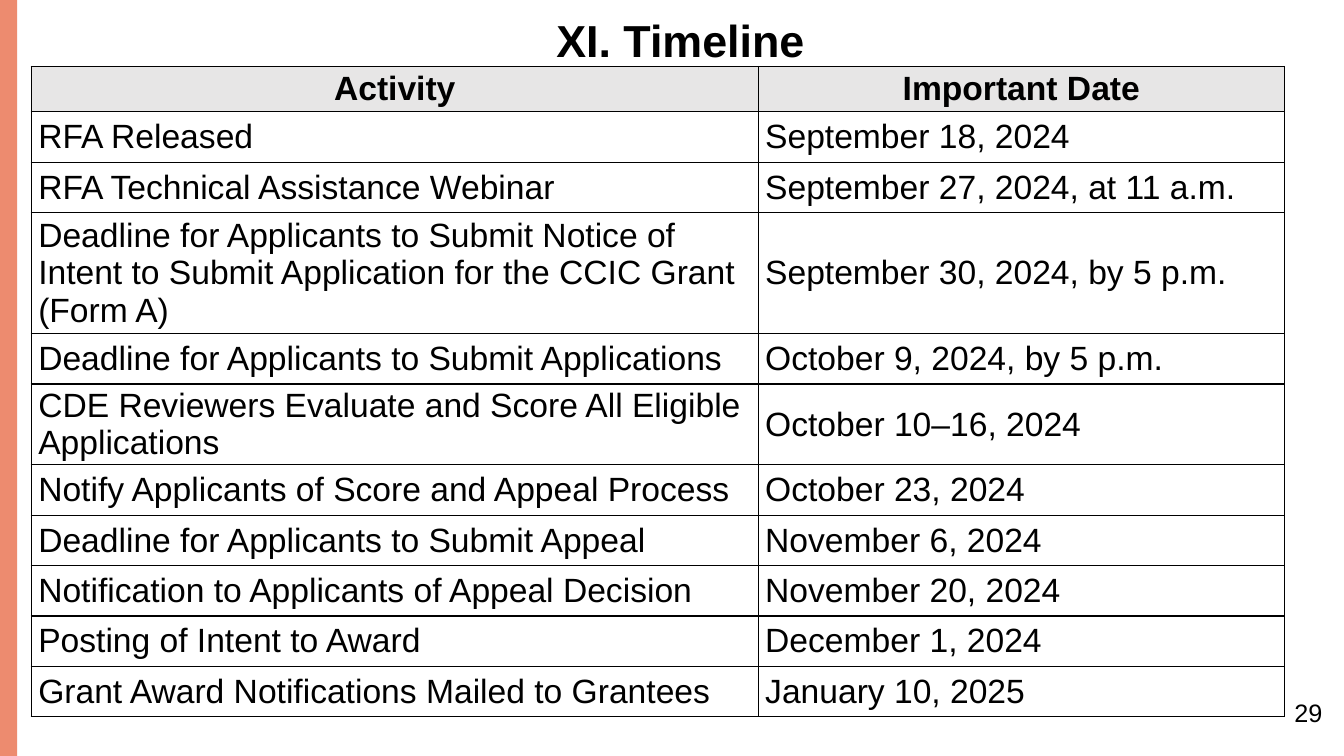
from lxml import etree
from pptx import Presentation, util as u
from pptx.dml.color import RGBColor
from pptx.enum import shapes, text
from pptx.oxml import ns

BLACK = RGBColor(0x00, 0x00, 0x00)
WHITE = RGBColor(0xFF, 0xFF, 0xFF)
GREY = RGBColor(0xE7, 0xE6, 0xE6)
CORAL = RGBColor(0xED, 0x8B, 0x6F)
PX = 9144

HEADER = ("Activity", "Important Date")
MILESTONES = [
    ("RFA Released", "September 18, 2024"),
    ("RFA Technical Assistance Webinar", "September 27, 2024, at 11 a.m."),
    ("Deadline for Applicants to Submit Notice of Intent to Submit Application "
     "for the CCIC Grant (Form A)", "September 30, 2024, by 5 p.m."),
    ("Deadline for Applicants to Submit Applications", "October 9, 2024, by 5 p.m."),
    ("CDE Reviewers Evaluate and Score All Eligible Applications", "October 10–16, 2024"),
    ("Notify Applicants of Score and Appeal Process", "October 23, 2024"),
    ("Deadline for Applicants to Submit Appeal", "November 6, 2024"),
    ("Notification to Applicants of Appeal Decision", "November 20, 2024"),
    ("Posting of Intent to Award", "December 1, 2024"),
    ("Grant Award Notifications Mailed to Grantees", "January 10, 2025"),
]


def assign(target, values):
    """Set each named attribute on the target."""
    for name, value in values.items():
        setattr(target, name, value)


class SlideBuilder:
    """Hold the style and current slide, and add elements measured in px."""

    font = "Arial"
    border = u.Pt(1)

    def __init__(self, slide):
        """Keep the slide to draw on."""
        self.slide = slide

    def box(self, *bounds):
        """Turn px lengths into EMU."""
        return [value * PX for value in bounds]

    def add_words(self, frame, words, size, bold=False, **layout):
        """Put one styled paragraph into a text frame."""
        paragraph = frame.paragraphs[0]
        assign(paragraph, layout)
        run = paragraph.add_run()
        run.text = words
        assign(run.font, {"name": self.font, "size": u.Pt(size), "bold": bold})
        run.font.color.rgb = BLACK

    def bar(self, bounds, color):
        """Add a plain filled rectangle."""
        shape = self.slide.shapes.add_shape(shapes.MSO_SHAPE.RECTANGLE, *self.box(*bounds))
        shape.shadow.inherit = False
        shape.fill.solid()
        shape.fill.fore_color.rgb = color
        shape.line.fill.background()

    def label(self, bounds, words, size, anchor=text.MSO_ANCHOR.TOP, **style):
        """Add a wrapping text box."""
        frame = self.slide.shapes.add_textbox(*self.box(*bounds)).text_frame
        assign(frame, {"word_wrap": True, "vertical_anchor": anchor})
        self.add_words(frame, words, size, **style)

    def outline(self, cell):
        """Draw black borders on all four sides of a cell."""
        properties = cell._tc.get_or_add_tcPr()
        for index, side in enumerate(("lnL", "lnR", "lnT", "lnB")):
            line = etree.Element(ns.qn(f"a:{side}"), w=str(int(self.border)))
            fill = etree.SubElement(line, ns.qn("a:solidFill"))
            etree.SubElement(fill, ns.qn("a:srgbClr"), val=str(BLACK))
            properties.insert(index, line)

    def cell(self, cell, words, heading):
        """Fill and format one table cell."""
        assign(cell, {
            "margin_left": 7 * PX, "margin_right": 7 * PX,
            "margin_top": 0, "margin_bottom": 0,
            "vertical_anchor": text.MSO_ANCHOR.MIDDLE,
        })
        cell.fill.solid()
        cell.fill.fore_color.rgb = GREY if heading else WHITE
        self.outline(cell)
        align = text.PP_ALIGN.CENTER if heading else text.PP_ALIGN.LEFT
        self.add_words(cell.text_frame, words, 24, bold=heading, alignment=align,
                       space_before=u.Pt(6), space_after=u.Pt(6))

    def table(self, bounds, widths, header_height, row_height, rows):
        """Add a bordered table whose first row is the heading."""
        frame = self.slide.shapes.add_table(len(rows), len(widths), *self.box(*bounds))
        table = frame.table
        table.horz_banding = False
        for column, width in zip(table.columns, widths):
            column.width = width * PX
        for index, entries in enumerate(rows):
            table.rows[index].height = (row_height if index else header_height) * PX
            for position, words in enumerate(entries):
                self.cell(table.cell(index, position), words, heading=index == 0)
        frame.height = bounds[3] * PX


def main():
    """Build and save the timeline slide."""
    presentation = Presentation()
    assign(presentation, {"slide_width": 1333 * PX, "slide_height": 750 * PX})
    builder = SlideBuilder(presentation.slides.add_slide(presentation.slide_layouts[6]))
    builder.bar((0, 0, 17, 750), CORAL)
    builder.label((17, 0, 1316, 85), "XI. Timeline", 32, anchor=text.MSO_ANCHOR.MIDDLE,
                  bold=True, alignment=text.PP_ALIGN.CENTER, line_spacing=0.9)
    builder.table((31, 66, 1243, 645), (721, 522), 45, 50, [HEADER, *MILESTONES])
    builder.label((1274, 687, 59, 48), "29", 18)
    presentation.save("out.pptx")


if __name__ == "__main__":
    main()
